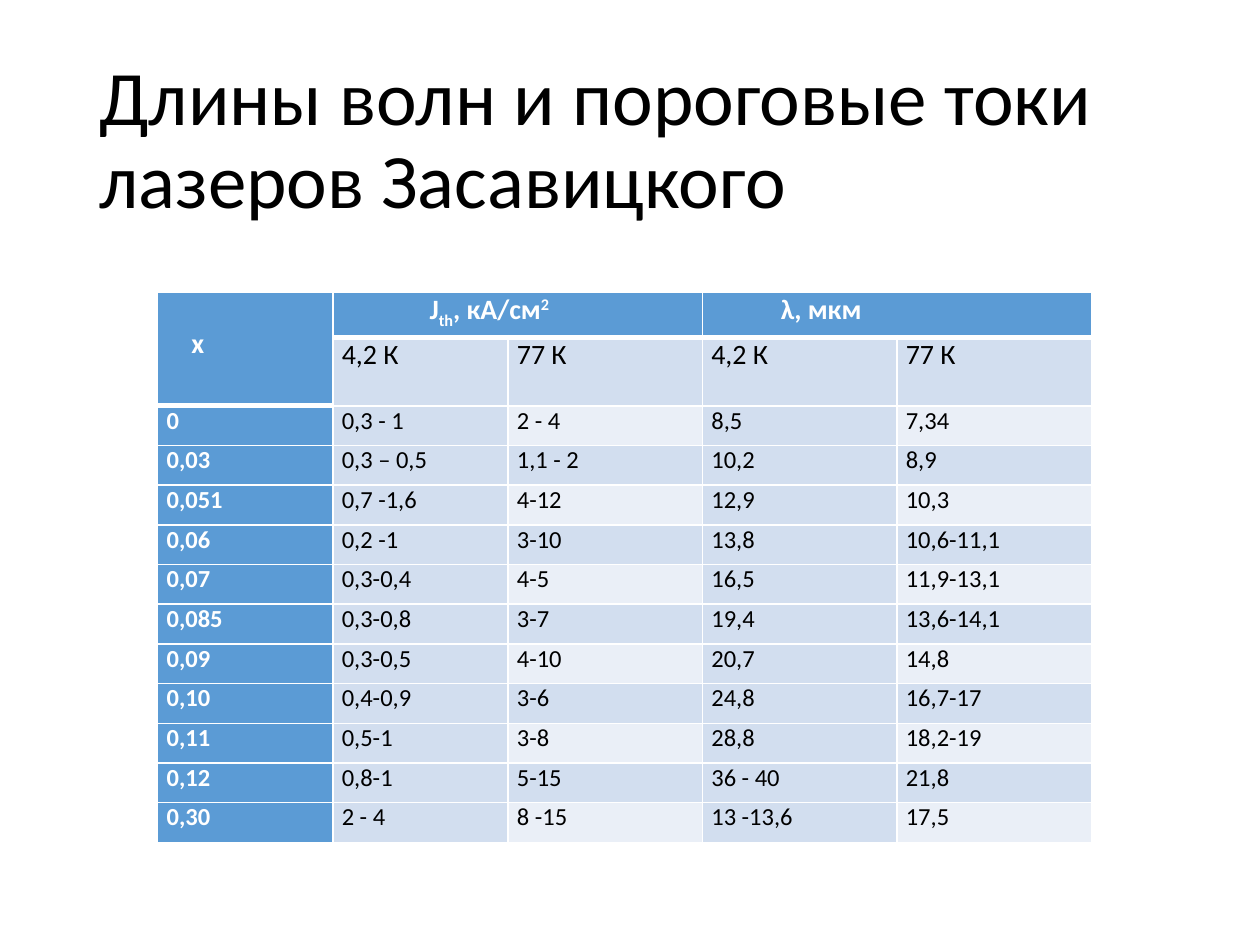
from dataclasses import dataclass

from lxml import etree
from pptx import Presentation
from pptx.dml.color import RGBColor
from pptx.enum.text import MSO_ANCHOR, MSO_AUTO_SIZE, PP_ALIGN
from pptx.oxml.ns import qn
from pptx.util import Cm, Pt

LEFT = PP_ALIGN.LEFT
TOP, MIDDLE = MSO_ANCHOR.TOP, MSO_ANCHOR.MIDDLE
NO_AUTOFIT = MSO_AUTO_SIZE.NONE
TITLE_ONLY = 5


@dataclass(frozen=True)
class Theme:
    font: str = "Calibri"
    ink: str = "000000"
    white: str = "FFFFFF"
    accent: str = "5B9BD5"
    band: str = "D2DEEF"
    light_band: str = "EAEFF7"
    title_size: int = 44
    header_size: int = 16
    body_size: int = 14
    thin_line: int = 1
    thick_line: int = 3


THEME = Theme()

TITLE = "Длины волн и пороговые токи лазеров Засавицкого"
COLUMN_WIDTHS = (3.53, 3.53, 3.92, 3.92, 3.92)
GROUP_HEIGHT, TEMPERATURE_HEIGHT, BODY_HEIGHT = 0.9, 1.37, 0.8
SIDE_MARGIN = 0.18

# Header cells: (row, column, last row, last column, left indent, top inset, runs)
# Each run is its text and its baseline shift in percent.
GROUPS = (
    (0, 0, 1, 0, 0.5, 0.69, (("х", 0),)),
    (0, 1, 0, 2, 1.77, 0, (("J", 0), ("th", -25), (", кА/см", 0), ("2", 30))),
    (0, 3, 0, 4, 1.4, 0, (("λ, мкм", 0),)),
)
TEMPERATURES = ("", "4,2 К", "77 К", "4,2 К", "77 К")
LASERS = (
    ("0", "0,3 - 1", "2 - 4", "8,5", "7,34"),
    ("0,03", "0,3 – 0,5", "1,1 - 2", "10,2", "8,9"),
    ("0,051", "0,7 -1,6", "4-12", "12,9", "10,3"),
    ("0,06", "0,2 -1", "3-10", "13,8", "10,6-11,1"),
    ("0,07", "0,3-0,4", "4-5", "16,5", "11,9-13,1"),
    ("0,085", "0,3-0,8", "3-7", "19,4", "13,6-14,1"),
    ("0,09", "0,3-0,5", "4-10", "20,7", "14,8"),
    ("0,10", "0,4-0,9", "3-6", "24,8", "16,7-17"),
    ("0,11", "0,5-1", "3-8", "28,8", "18,2-19"),
    ("0,12", "0,8-1", "5-15", "36 - 40", "21,8"),
    ("0,30", "2 - 4", "8 -15", "13 -13,6", "17,5"),
)


def set_font(paragraph, size, color, bold=False):
    font = paragraph.font
    font.name, font.size, font.bold = THEME.font, Pt(size), bold
    font.color.rgb = RGBColor.from_string(color)


def set_borders(cell, top, bottom):
    """Draw white cell borders; the fill has to be set afterwards."""
    properties = cell._tc.get_or_add_tcPr()
    widths = {"L": THEME.thin_line, "R": THEME.thin_line, "T": top, "B": bottom}
    for side, width in widths.items():
        line = etree.SubElement(properties, qn(f"a:ln{side}"), w=str(Pt(width)))
        fill = etree.SubElement(line, qn("a:solidFill"))
        etree.SubElement(fill, qn("a:srgbClr"), val=THEME.white)


def format_cell(cell, row, column):
    # A thick rule closes the header: below row 1 for х, below row 0 elsewhere
    rule = 2 if column == 0 else 1
    top, bottom = (THEME.thick_line if edge == rule else THEME.thin_line
                   for edge in (row, row + 1))
    set_borders(cell, top, bottom)

    is_header = row == 0 or column == 0
    is_light = row >= 2 and row % 2 == 0 and column in (2, 4)
    fill = (THEME.accent if is_header
            else THEME.light_band if is_light else THEME.band)
    cell.fill.solid()
    cell.fill.fore_color.rgb = RGBColor.from_string(fill)

    cell.vertical_anchor = TOP
    cell.margin_left = cell.margin_right = Cm(SIDE_MARGIN)
    cell.margin_top = cell.margin_bottom = 0
    set_font(cell.text_frame.paragraphs[0],
             THEME.header_size if row < 2 else THEME.body_size,
             THEME.white if is_header else THEME.ink, is_header)


def add_title(slide, left, top, width, height):
    title = slide.shapes.title
    title.left, title.top, title.width, title.height = left, top, width, height
    frame = title.text_frame
    frame.text = TITLE
    frame.word_wrap = True
    frame.auto_size = NO_AUTOFIT
    frame.vertical_anchor = MIDDLE
    paragraph = frame.paragraphs[0]
    paragraph.alignment = LEFT
    paragraph.line_spacing = 0.9
    set_font(paragraph, THEME.title_size, THEME.ink)


def add_laser_table(slide, left, top):
    heights = [GROUP_HEIGHT, TEMPERATURE_HEIGHT] + [BODY_HEIGHT] * len(LASERS)
    table = slide.shapes.add_table(
        len(heights), len(COLUMN_WIDTHS), left, top,
        Cm(sum(COLUMN_WIDTHS)), Cm(sum(heights))).table
    table.first_row = table.horz_banding = False
    for column, width in zip(table.columns, COLUMN_WIDTHS):
        column.width = Cm(width)
    for row, height in zip(table.rows, heights):
        row.height = Cm(height)

    # Temperatures and measured values
    group_row = ("",) * len(COLUMN_WIDTHS)
    for r, values in enumerate((group_row, TEMPERATURES, *LASERS)):
        for c, value in enumerate(values):
            cell = table.cell(r, c)
            cell.text = value
            format_cell(cell, r, c)

    # Merged header cells
    for row, column, last_row, last_column, indent, inset, runs in GROUPS:
        cell = table.cell(row, column)
        cell.merge(table.cell(last_row, last_column))
        cell.margin_left = Cm(SIDE_MARGIN + indent)
        cell.margin_top = Cm(inset)
        paragraph = cell.text_frame.paragraphs[0]
        for text, shift in runs:
            run = paragraph.add_run()
            run.text = text
            if shift:
                run.font._element.set("baseline", str(shift * 1000))


def main():
    presentation = Presentation()
    presentation.slide_width, presentation.slide_height = Cm(25.4), Cm(19.05)
    slide = presentation.slides.add_slide(presentation.slide_layouts[TITLE_ONLY])
    add_title(slide, Cm(1.75), Cm(1.02), Cm(21.9), Cm(3.68))
    add_laser_table(slide, Cm(3.18), Cm(5.9))
    presentation.save("out.pptx")


if __name__ == "__main__":
    main()
